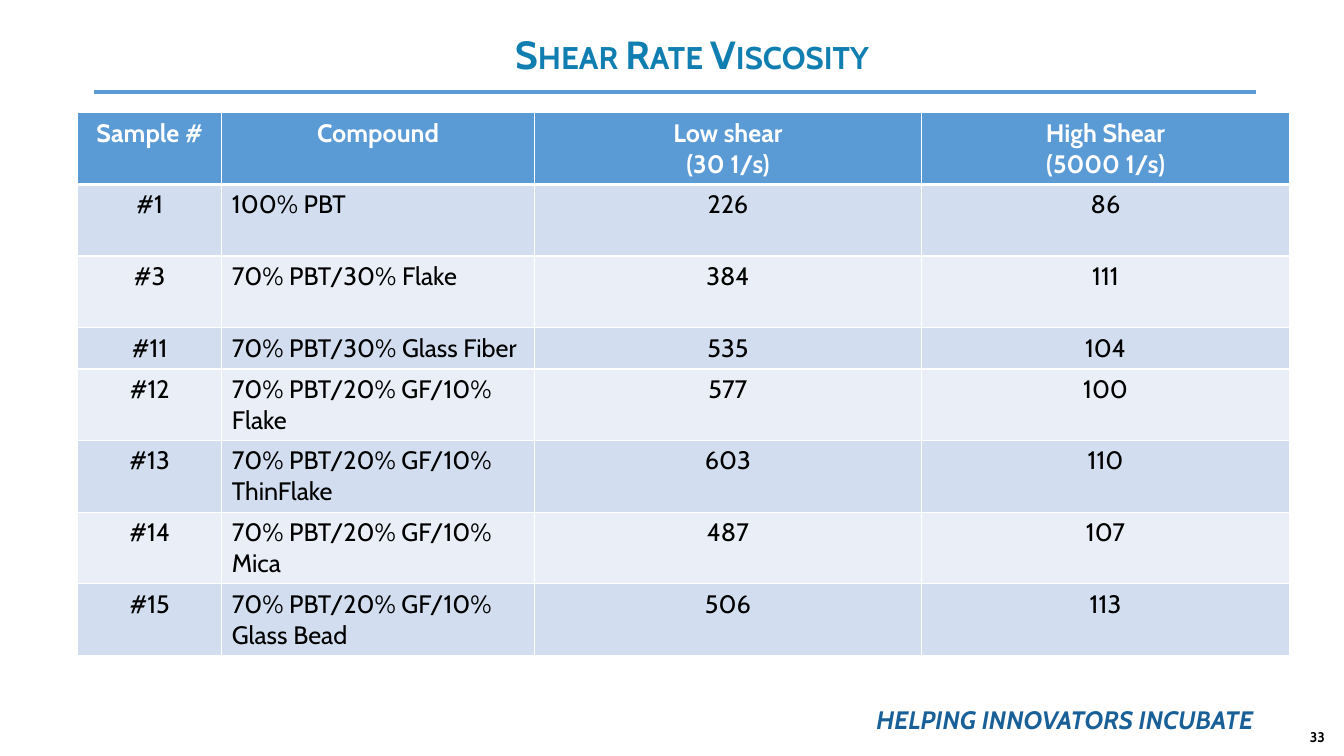
from dataclasses import dataclass

from lxml.etree import SubElement
from pptx import Presentation
from pptx.dml.color import RGBColor
from pptx.enum.shapes import MSO_CONNECTOR as Connector, MSO_SHAPE as Preset
from pptx.enum.text import MSO_ANCHOR as Anchor, MSO_AUTO_SIZE as AutoSize, PP_ALIGN as Align
from pptx.oxml.ns import qn
from pptx.slide import Slide
from pptx.table import _Cell as Cell
from pptx.text.text import TextFrame, _Paragraph as Paragraph, _Run as Run
from pptx.util import Inches, Pt

COLORS = {
    "white": "FFFFFF", "black": "000000", "header": "5B9BD5", "odd": "D2DEEF",
    "even": "EAEFF7", "title": "107EB0", "slogan": "1A6098",
}
COLUMN_WIDTHS = (1.43, 3.1, 3.84, 3.65)
SINGLE_LINE, DOUBLE_LINE = 0.41, 0.71
HEADINGS = ("Sample #", "Compound", "Low shear\n(30 1/s)", "High Shear\n(5000 1/s)")


@dataclass(frozen=True)
class Sample:
    number: int
    compound: str
    low_shear: int
    high_shear: int
    height: float = DOUBLE_LINE

    def texts(self) -> tuple[str, ...]:
        return f"#{self.number}", self.compound, str(self.low_shear), str(self.high_shear)


@dataclass(frozen=True)
class Style:
    size: float
    color: str
    bold: bool = False
    italic: bool = False


SAMPLES = (
    Sample(1, "100% PBT", 226, 86),
    Sample(3, "70% PBT/30% Flake", 384, 111),
    Sample(11, "70% PBT/30% Glass Fiber", 535, 104, SINGLE_LINE),
    Sample(12, "70% PBT/20% GF/10% Flake", 577, 100),
    Sample(13, "70% PBT/20% GF/10% ThinFlake", 603, 110),
    Sample(14, "70% PBT/20% GF/10% Mica", 487, 107),
    Sample(15, "70% PBT/20% GF/10% Glass Bead", 506, 113),
)
HEADER_STYLE = Style(18, "white", bold=True)
BODY_STYLE = Style(18, "black")


def rgb(color: str) -> RGBColor:
    return RGBColor.from_string(COLORS[color])


def add_run(paragraph: Paragraph, text: str, style: Style, align: Align) -> Run:
    paragraph.alignment = align
    run = paragraph.add_run()
    run.text = text
    font = run.font
    font.name, font.size = "Cabin", Pt(style.size)
    font.bold, font.italic = style.bold, style.italic
    font.color.rgb = rgb(style.color)
    return run


def write(frame: TextFrame, text: str, style: Style, align: Align) -> None:
    for index, line in enumerate(text.split("\n")):
        paragraph = frame.add_paragraph() if index else frame.paragraphs[0]
        add_run(paragraph, line, style, align)


def set_borders(cell: Cell, top: float, bottom: float) -> None:
    properties = cell._tc.get_or_add_tcPr()
    for side, width in (("L", 1), ("R", 1), ("T", top), ("B", bottom)):
        border = SubElement(properties, qn(f"a:ln{side}"), w=str(Pt(width)))
        fill = SubElement(border, qn("a:solidFill"))
        SubElement(fill, qn("a:srgbClr"), val=COLORS["white"])


def add_title(slide: Slide) -> None:
    title = slide.shapes.title
    title.left, title.top = Inches(1.85), Inches(0.3)
    title.width, title.height = Inches(10.03), Inches(0.53)
    frame = title.text_frame
    frame.word_wrap, frame.auto_size = True, AutoSize.NONE
    frame.vertical_anchor = Anchor.MIDDLE
    heading = frame.paragraphs[0]
    heading.line_spacing = 0.9
    run = add_run(heading, "Shear Rate Viscosity", Style(28, "title", bold=True), Align.CENTER)
    run.font._element.set("cap", "small")


def add_rule(slide: Slide) -> None:
    rule = slide.shapes.add_connector(
        Connector.STRAIGHT, Inches(0.93), Inches(0.91), Inches(12.46), Inches(0.91))
    rule.line.color.rgb = rgb("header")
    rule.line.width = Pt(3)
    SubElement(rule._element.spPr, qn("a:effectLst"))


def add_viscosity_table(slide: Slide) -> None:
    heights = (DOUBLE_LINE, *(sample.height for sample in SAMPLES))
    table = slide.shapes.add_table(
        len(heights), len(COLUMN_WIDTHS), Inches(0.77), Inches(1.12),
        Inches(sum(COLUMN_WIDTHS)), Inches(sum(heights))).table
    for column, width in zip(table.columns, COLUMN_WIDTHS):
        column.width = Inches(width)
    contents = (HEADINGS, *(sample.texts() for sample in SAMPLES))
    for row, (height, texts) in enumerate(zip(heights, contents)):
        table.rows[row].height = Inches(height)
        band = "header" if row == 0 else "odd" if row % 2 else "even"
        for column, text in enumerate(texts):
            cell = table.cell(row, column)
            set_borders(cell, top=3 if row == 1 else 1, bottom=3 if row == 0 else 1)
            cell.fill.solid()
            cell.fill.fore_color.rgb = rgb(band)
            align = Align.LEFT if row and column == 1 else Align.CENTER
            write(cell.text_frame, text, BODY_STYLE if row else HEADER_STYLE, align)


def add_page_number(slide: Slide) -> None:
    page_number = slide.shapes.add_textbox(
        Inches(12.68), Inches(7.2), Inches(0.56), Inches(0.23))
    frame = page_number.text_frame
    frame.word_wrap = True
    frame.vertical_anchor = Anchor.MIDDLE
    write(frame, "33", Style(10, "black", bold=True), Align.RIGHT)


def add_slogan(slide: Slide) -> None:
    slogan = slide.shapes.add_shape(
        Preset.RECTANGLE, Inches(8.2), Inches(6.94), Inches(4.72), Inches(0.4))
    slogan.shadow.inherit = False
    slogan.fill.solid()
    slogan.fill.fore_color.rgb = rgb("white")
    slogan.line.fill.background()
    frame = slogan.text_frame
    frame.word_wrap = True
    frame.auto_size = AutoSize.SHAPE_TO_FIT_TEXT
    frame.vertical_anchor = Anchor.TOP
    style = Style(18, "slogan", bold=True, italic=True)
    write(frame, "HELPING INNOVATORS INCUBATE", style, Align.CENTER)


def main() -> None:
    """Build the shear rate viscosity slide."""
    deck = Presentation()
    deck.slide_width, deck.slide_height = Inches(13.33), Inches(7.5)
    slide = deck.slides.add_slide(deck.slide_layouts.get_by_name("Title Only"))
    add_rule(slide)
    add_viscosity_table(slide)
    add_page_number(slide)
    add_slogan(slide)
    add_title(slide)
    deck.save("out.pptx")


if __name__ == "__main__":
    main()
